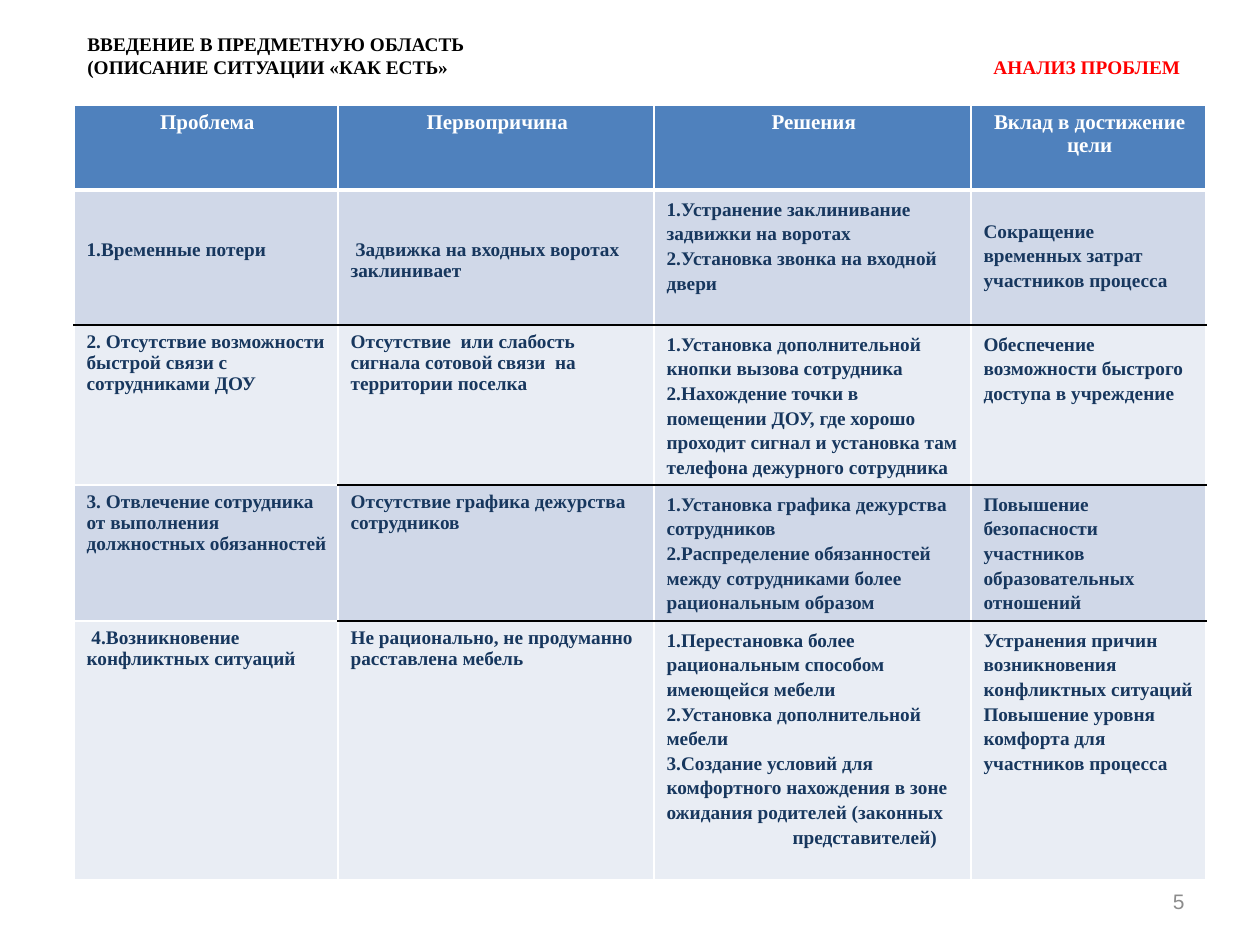
from dataclasses import dataclass

from lxml.etree import SubElement
from pptx import Presentation
from pptx.dml.color import RGBColor
from pptx.enum.text import MSO_ANCHOR, PP_ALIGN
from pptx.oxml.ns import qn
from pptx.util import Pt


@dataclass(frozen=True)
class Theme:
    serif: str = "Times New Roman"
    sans: str = "Arial"
    header_fill: str = "4F81BD"
    bands: tuple = ("D0D8E8", "E9EDF4")
    white: str = "FFFFFF"
    black: str = "000000"
    navy: str = "17375E"
    red: str = "FF0000"
    grey: str = "8C8C8C"
    body_size: int = 11
    header_size: int = 12
    thin: int = 1
    thick: int = 3


@dataclass(frozen=True)
class Line:
    """One paragraph; indent is its left offset in px."""
    text: str
    spacing: float = 1.0
    indent: int = 0


def px(length):
    return round(length * 914400 / 126)


def apply(target, values):
    for name, value in values.items():
        setattr(target, name, value)


class SlideBuilder:
    def __init__(self, slide, theme):
        self.slide = slide
        self.theme = theme

    def run(self, paragraph, text, color, size, face=None, bold=True):
        run = paragraph.add_run()
        run.text = text
        apply(run.font, {"name": face or self.theme.serif, "size": Pt(size), "bold": bold})
        run.font.color.rgb = RGBColor.from_string(color)

    def text_box(self, left, top, width, height, anchor=MSO_ANCHOR.TOP):
        frame = self.slide.shapes.add_textbox(*map(px, (left, top, width, height))).text_frame
        apply(frame, {"word_wrap": True, "vertical_anchor": anchor})
        return frame

    def heading(self, first_line, second_line, topic):
        """Two-line heading with the topic on a right tab of the second line."""
        theme = self.theme
        frame = self.text_box(75, 26, 1121, 59)
        self.run(frame.paragraphs[0], first_line, theme.black, theme.body_size)
        second = frame.add_paragraph()
        tabs = SubElement(second._p.get_or_add_pPr(), qn("a:tabLst"))
        SubElement(tabs, qn("a:tab"), pos=str(px(1093)), algn="r")
        self.run(second, second_line + "\t", theme.black, theme.body_size)
        self.run(second, topic, theme.red, theme.body_size)

    def page_number(self, number):
        paragraph = self.text_box(903, 876, 294, 50, MSO_ANCHOR.MIDDLE).paragraphs[0]
        paragraph.alignment = PP_ALIGN.RIGHT
        self.run(paragraph, number, self.theme.grey, self.theme.header_size, self.theme.sans, False)

    def border(self, cell, side, color, width):
        line = SubElement(cell._tc.get_or_add_tcPr(), qn(f"a:ln{side}"), w=str(Pt(width)))
        fill = SubElement(line, qn("a:solidFill"))
        SubElement(fill, qn("a:srgbClr"), val=color)

    def divider(self, row, column, last_row):
        """Colour and width of the line below a row; -1 is the table's top edge."""
        theme = self.theme
        if row == 0:
            return theme.white, theme.thick
        inner = 0 < row < last_row
        dark = inner and (row == 1 or column > 0)
        return (theme.black if dark else theme.white), theme.thin

    def cell(self, cell, lines, fill, color, size, align, dividers, top_gap=0):
        apply(cell, {
            "vertical_anchor": MSO_ANCHOR.TOP,
            "margin_top": px(6 + top_gap),
            "margin_right": px(10),
        })
        frame = cell.text_frame
        for index, line in enumerate(lines):
            paragraph = frame.add_paragraph() if index else frame.paragraphs[0]
            apply(paragraph, {"alignment": align, "line_spacing": line.spacing})
            if line.indent:
                paragraph._p.get_or_add_pPr().set("marL", str(px(line.indent)))
            self.run(paragraph, line.text, color, size)
        above, below = dividers
        white_edge = (self.theme.white, self.theme.thin)
        for side, style in zip("LRTB", (white_edge, white_edge, above, below)):
            self.border(cell, side, *style)
        cell.fill.solid()
        cell.fill.fore_color.rgb = RGBColor.from_string(fill)

    def table(self, left, top, widths, heights, rows, top_gaps):
        theme = self.theme
        table = self.slide.shapes.add_table(
            len(heights), len(widths), px(left), px(top), px(sum(widths)), px(sum(heights))
        ).table
        for column, width in zip(table.columns, widths):
            column.width = px(width)
        for row, height in zip(table.rows, heights):
            row.height = px(height)
        last_row = len(rows) - 1
        for r, row in enumerate(rows):
            if r == 0:
                style = (theme.header_fill, theme.white, theme.header_size, PP_ALIGN.CENTER)
            else:
                style = (theme.bands[(r - 1) % 2], theme.navy, theme.body_size, PP_ALIGN.LEFT)
            for c, lines in enumerate(row):
                dividers = [self.divider(edge, c, last_row) for edge in (r - 1, r)]
                self.cell(table.cell(r, c), lines, *style, dividers, top_gaps.get((r, c), 0))


def plain(text):
    return [Line(text)]


def loose(*texts):
    return [Line(text, 1.15) for text in texts]


HEADER = [plain(title) for title in
          ("Проблема", "Первопричина", "Решения", "Вклад в достижение цели")]

PROBLEMS = [
    [plain("1.Временные потери"),
     plain(" Задвижка на входных воротах заклинивает"),
     loose("1.Устранение заклинивание задвижки на воротах",
           "2.Установка звонка на входной двери"),
     loose("Сокращение", "временных затрат участников процесса")],
    [plain("2. Отсутствие возможности быстрой связи с сотрудниками ДОУ"),
     plain("Отсутствие  или слабость сигнала сотовой связи  на территории поселка"),
     loose("1.Установка дополнительной кнопки вызова сотрудника",
           "2.Нахождение точки в помещении ДОУ, где хорошо проходит сигнал "
           "и установка там телефона дежурного сотрудника"),
     loose("Обеспечение возможности быстрого доступа в учреждение")],
    [plain("3. Отвлечение сотрудника от выполнения должностных обязанностей"),
     plain("Отсутствие графика дежурства сотрудников"),
     loose("1.Установка графика дежурства сотрудников",
           "2.Распределение обязанностей между сотрудниками более рациональным образом"),
     loose("Повышение безопасности участников образовательных отношений")],
    [plain(" 4.Возникновение конфликтных ситуаций"),
     plain("Не рационально, не продуманно расставлена мебель"),
     loose("1.Перестановка более рациональным способом имеющейся мебели",
           "2.Установка дополнительной мебели",
           "3.Создание условий для комфортного нахождения в зоне ожидания "
           "родителей (законных") + [Line("представителей)", 1.15, indent=126)],
     loose("Устранения причин возникновения конфликтных ситуаций",
           "Повышение уровня комфорта для участников процесса")],
]


def main():
    deck = Presentation()
    apply(deck, {"slide_width": px(1260), "slide_height": px(945)})
    builder = SlideBuilder(deck.slides.add_slide(deck.slide_layouts[6]), Theme())
    builder.table(
        74, 105,
        widths=(264, 316, 317, 235),
        heights=(85, 135, 160, 136, 259),
        rows=[HEADER] + PROBLEMS,
        top_gaps={(1, 0): 43, (1, 1): 43, (1, 3): 22},
    )
    builder.heading("ВВЕДЕНИЕ В ПРЕДМЕТНУЮ ОБЛАСТЬ",
                    "(ОПИСАНИЕ СИТУАЦИИ «КАК ЕСТЬ»", "АНАЛИЗ ПРОБЛЕМ")
    builder.page_number("5")
    deck.save("out.pptx")


if __name__ == "__main__":
    main()
